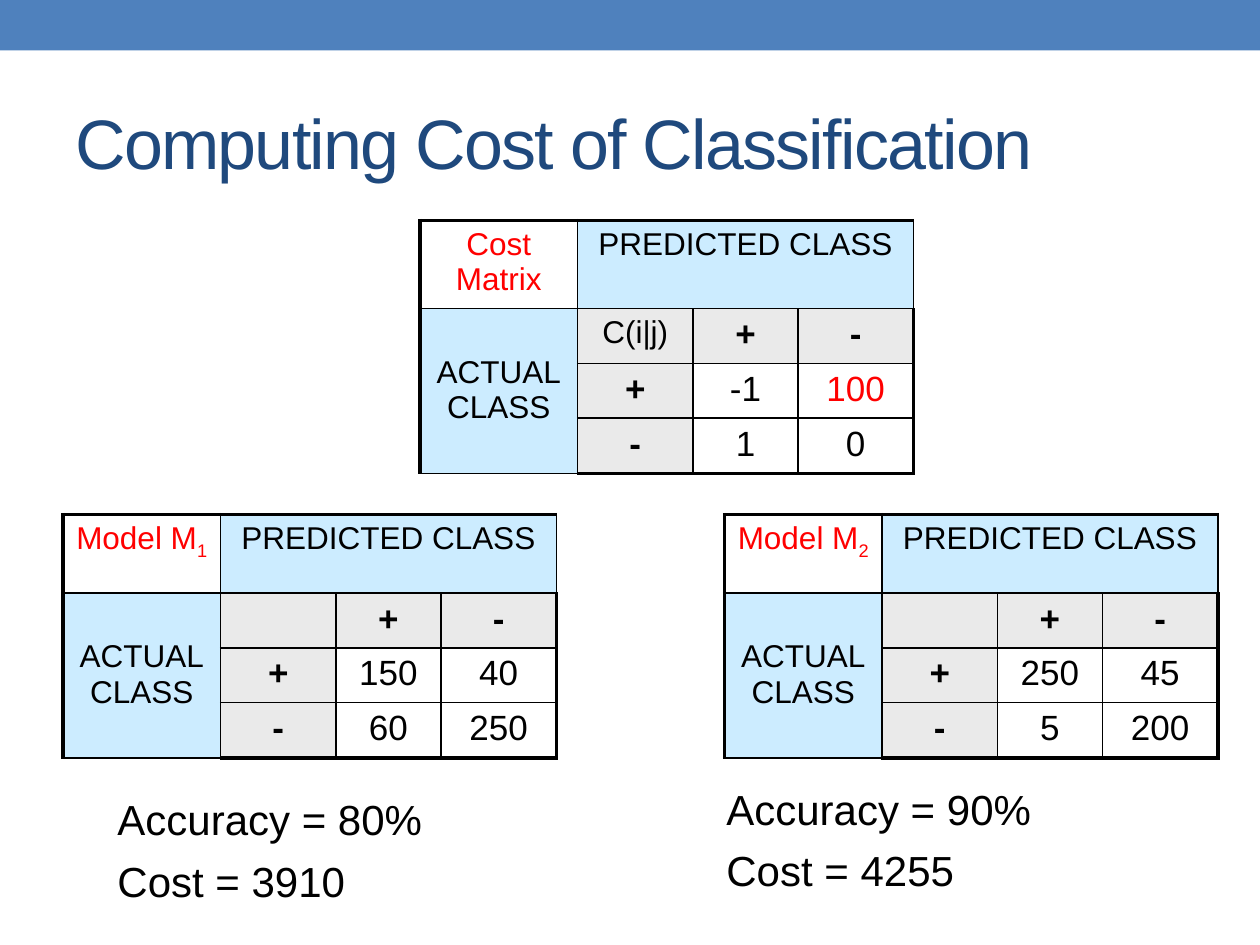
import pptx
import pptx.util
import pptx.dml.color
import pptx.enum.shapes
import pptx.enum.text
import pptx.oxml

Pt = pptx.util.Pt
ALIGN = pptx.enum.text.PP_ALIGN
ANCHOR = pptx.enum.text.MSO_ANCHOR
NS = 'xmlns:a="http://schemas.openxmlformats.org/drawingml/2006/main"'
COLS = [15, 11, 10, 11]
ROWS = [7.5, 4.6, 5, 5.3]
BLUE, GREY, WHITE = "CCECFF", "EAEAEA", "FFFFFF"
BLACK, RED = "000000", "FF0000"


def rgb(value):
    return pptx.dml.color.RGBColor.from_string(value)


def style(p, size, color, bold=False):
    p.font.name = "Arial"
    p.font.size = Pt(size)
    p.font.bold = bold
    p.font.color.rgb = rgb(color)


prs = pptx.Presentation()
prs.slide_width = pptx.util.Inches(10)
prs.slide_height = pptx.util.Inches(7.5)
unit = prs.slide_width / 120
s = prs.slides.add_slide(prs.slide_layouts[6])

band = s.shapes.add_shape(pptx.enum.shapes.MSO_SHAPE.RECTANGLE,
                          0, 0, prs.slide_width, int(4.8 * unit))
band.shadow.inherit = False
band.fill.solid()
band.fill.fore_color.rgb = rgb("4F81BD")
band.line.fill.background()

title = s.shapes.add_textbox(*[int(n * unit) for n in (6, 7, 108, 13)])
tf = title.text_frame
tf.word_wrap = True
tf.vertical_anchor = ANCHOR.MIDDLE
p = tf.paragraphs[0]
r = p.add_run()
r.text = "Computing Cost of Classification"
style(p, 40, "1F497D")
r._r.get_or_add_rPr().set("spc", "-100")

matrices = [
    (40, 21, "Cost Matrix", "", "C(i|j)", [["-1", "100"], ["1", "0"]]),
    (6, 49, "Model M", "1", "", [["150", "40"], ["60", "250"]]),
    (69, 49, "Model M", "2", "", [["250", "45"], ["5", "200"]]),
]
for left, top, name, index, corner, values in matrices:
    frame = s.shapes.add_table(4, 4, int(left * unit), int(top * unit),
                               int(sum(COLS) * unit), int(sum(ROWS) * unit))
    table = frame.table
    for column, width in zip(table.columns, COLS):
        column.width = int(width * unit)
    for row, height in zip(table.rows, ROWS):
        row.height = int(height * unit)
    table.cell(0, 1).merge(table.cell(0, 3))
    table.cell(1, 0).merge(table.cell(3, 0))
    texts = [
        [name, "PREDICTED CLASS", "", ""],
        ["ACTUAL\vCLASS", corner, "+", "-"],
        ["", "+", *values[0]],
        ["", "-", *values[1]],
    ]
    for i in range(4):
        for j in range(4):
            cell = table.cell(i, j)
            p = cell.text_frame.paragraphs[0]
            p.text = texts[i][j]
            p.alignment = ALIGN.CENTER
            heading = i == 0 or j == 0
            label = not heading and (i == 1 or j == 1)
            small = heading or (i, j) == (1, 1)
            red = (i, j) == (0, 0) or texts[i][j] == "100"
            style(p, 18 if small else 20, RED if red else BLACK,
                  label and not small)
            if (i, j) == (0, 0) and index:
                r = p.add_run()
                r.text = index
                r.font._element.set("baseline", "-25000")
            if (i, j) == (1, 0):
                cell.margin_top = int(4.4 * unit)
            tcPr = cell._tc.get_or_add_tcPr()
            for side, outer in (("L", j == 0), ("R", j == 3),
                                ("T", i == 0), ("B", i == 3)):
                width = Pt(2.25 if outer else 1)
                tcPr.append(pptx.oxml.parse_xml(
                    f'<a:ln{side} {NS} w="{width}"><a:solidFill>'
                    f'<a:srgbClr val="{BLACK}"/></a:solidFill></a:ln{side}>'))
            cell.fill.solid()
            fill = WHITE if i == j == 0 else BLUE if heading else GREY if label else WHITE
            cell.fill.fore_color.rgb = rgb(fill)

results = [
    (10, 75, ["Accuracy = 80%", "Cost = 3910"]),
    (68, 74, ["Accuracy = 90%", "Cost = 4255"]),
]
for left, top, lines in results:
    box = s.shapes.add_textbox(*[int(n * unit) for n in (left, top, 40, 13)])
    tf = box.text_frame
    tf.word_wrap = True
    tf.text = "\n".join(lines)
    for p in tf.paragraphs:
        style(p, 24, BLACK)
        p.space_before = Pt(2.4)
        p.space_after = Pt(4)

prs.save("out.pptx")
